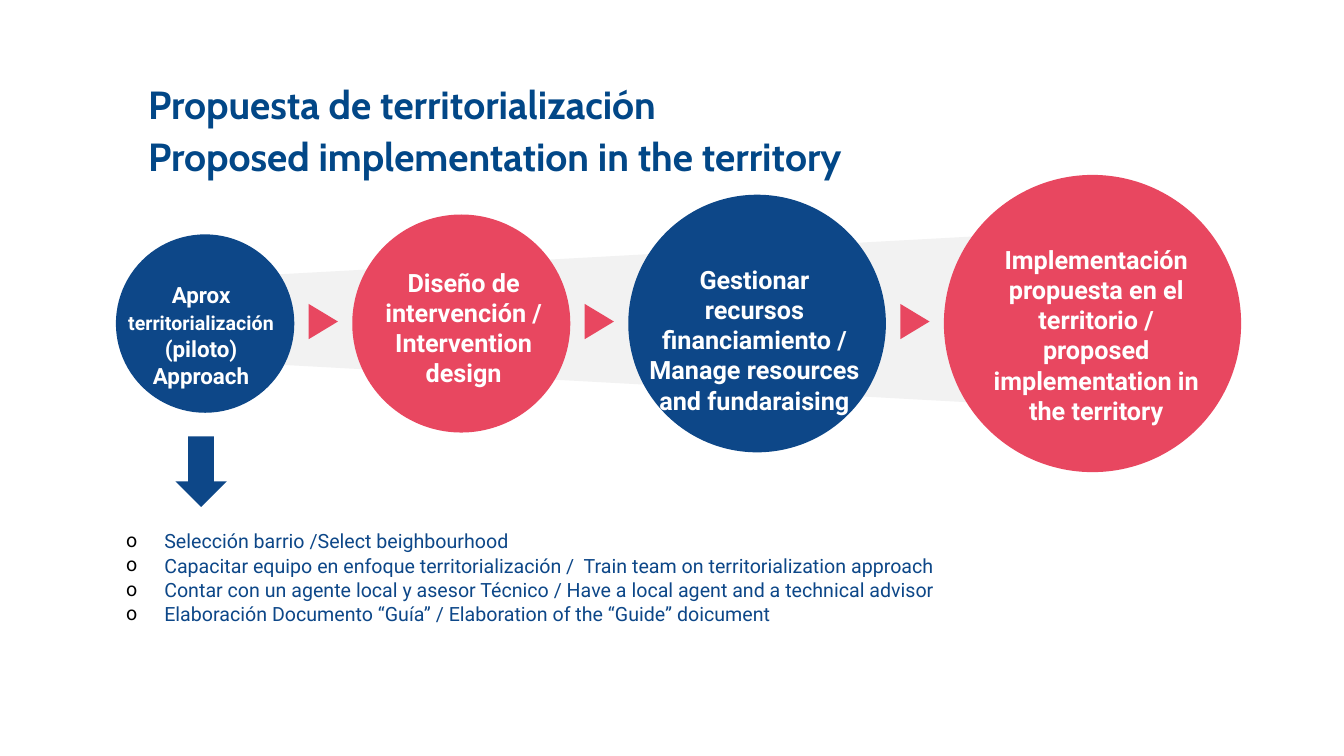
import pptx
import pptx.dml.color
import pptx.enum.shapes
import pptx.enum.text
import pptx.oxml
import pptx.oxml.ns
import pptx.util

CELL = pptx.util.Inches(0.1)
COLUMNS, ROWS = 133.33, 75
NAVY, CORAL, WHITE, TITLE_BLUE = "0D4788", "E84760", "FFFFFF", "024787"
PRESETS = pptx.enum.shapes.MSO_SHAPE
ALIGN = pptx.enum.text.PP_ALIGN

AXIS = 32.1
FIRST_LEFT, FIRST_DIAMETER, GROWTH, GAP = 11.5, 17.7, 3.93, 5.75
STAGES = [
    (NAVY, (11.2, 27.4, 17.5, 11.8),
     [[("Aprox ", 16), ("territorialización", 14), (" (piloto)", 16)], [("Approach", 16)]]),
    (CORAL, (37, 26, 18, 13.1),
     [[("Diseño de intervención / Intervention design", 18)]]),
    (NAVY, (63.3, 25.7, 23.1, 13.1),
     [[("Gestionar recursos financiamiento / Manage resources and fundaraising", 18)]]),
    (CORAL, (97.2, 23.7, 23.1, 19.2),
     [[("Implementación propuesta en el territorio / proposed implementation in the territory", 18)]]),
]
TITLES = ["Propuesta de territorialización", "Proposed implementation in the territory"]
STEPS = [
    "Selección barrio /Select beighbourhood",
    "Capacitar equipo en enfoque territorialización /  Train team on territorialization approach",
    "Contar con un agente local y asesor Técnico / Have a local agent and a technical advisor",
    "Elaboración Documento “Guía” / Elaboration of the “Guide” doicument",
]


def grid(*cells):
    return [round(cell * CELL) for cell in cells]


def color(value):
    return pptx.dml.color.RGBColor.from_string(value)


def paint(shape, fill):
    shape.fill.solid()
    shape.fill.fore_color.rgb = color(fill)
    shape.line.fill.background()
    shape.shadow.inherit = False


def add_filled(slide, preset, cells, fill):
    shape = slide.shapes.add_shape(preset, *grid(*cells))
    paint(shape, fill)
    return shape


def add_bullet(paragraph):
    properties = paragraph._p.get_or_add_pPr()
    indent = pptx.util.Inches(0.38)
    properties.set("marL", str(indent))
    properties.set("indent", str(-indent))
    namespace = pptx.oxml.ns.nsdecls("a")
    for element in (
        f'<a:buClr {namespace}><a:srgbClr val="000000"/></a:buClr>',
        f'<a:buFont {namespace} typeface="Roboto"/>',
        f'<a:buChar {namespace} char="o"/>',
    ):
        properties.append(pptx.oxml.parse_xml(element))


def write(holder, paragraphs, font, fill, bold=False, align=ALIGN.LEFT, gap=0, bulleted=False, margin=0.05):
    frame = holder.text_frame
    frame.word_wrap = True
    frame.auto_size = pptx.enum.text.MSO_AUTO_SIZE.NONE
    frame.vertical_anchor = pptx.enum.text.MSO_ANCHOR.TOP
    frame.margin_left = frame.margin_right = pptx.util.Inches(0.1)
    frame.margin_top = frame.margin_bottom = pptx.util.Inches(margin)
    for number, pieces in enumerate(paragraphs):
        paragraph = frame.add_paragraph() if number else frame.paragraphs[0]
        if bulleted:
            add_bullet(paragraph)
        paragraph.alignment = align
        paragraph.space_before = pptx.util.Pt(gap if number else 0)
        for text, size in pieces:
            run = paragraph.add_run()
            run.text = text
            run.font.name = font
            run.font.size = pptx.util.Pt(size)
            run.font.bold = bold
            run.font.color.rgb = color(fill)


def place(holder, cells):
    holder.left, holder.top, holder.width, holder.height = grid(*cells)


def add_beam(slide):
    left, right = 22.5, 97.7
    corners = [(left, 27.5), (right, 23.4), (right, 40), (left, 35.9)]
    start, *others = [grid(*corner) for corner in corners]
    builder = slide.shapes.build_freeform(*start, scale=1.0)
    builder.add_line_segments(others, close=True)
    paint(builder.convert_to_shape(), "F2F2F2")


def add_stages(slide):
    left = FIRST_LEFT
    for number, (fill, label_cells, paragraphs) in enumerate(STAGES):
        diameter = FIRST_DIAMETER + number * GROWTH
        if number:
            width, height = 3.5, 2.9
            pointer = add_filled(
                slide, PRESETS.ISOSCELES_TRIANGLE,
                (left - GAP / 2 - width / 2, AXIS - 0.2 - height / 2, width, height), CORAL)
            pointer.rotation = 90
        add_filled(slide, PRESETS.OVAL, (left, AXIS - diameter / 2, diameter, diameter), fill)
        label = slide.shapes.add_textbox(*grid(*label_cells))
        write(label, paragraphs, "Roboto", WHITE, bold=True, align=ALIGN.CENTER)
        left += diameter + GAP


def main():
    deck = pptx.Presentation()
    deck.slide_width, deck.slide_height = grid(COLUMNS, ROWS)
    slide = deck.slides.add_slide(deck.slide_layouts[1])
    title, steps = slide.placeholders

    place(title, (13.7, 7, 75, 12.2))
    write(title, [[(line, 28)] for line in TITLES], "Cabin", TITLE_BLUE, bold=True, gap=3.4, margin=0.1)

    add_beam(slide)
    add_stages(slide)
    add_filled(slide, PRESETS.DOWN_ARROW, (17.4, 43.3, 5.1, 7), NAVY)

    place(steps, (11.5, 52, 105.7, 10.4))
    write(steps, [[(step, 14)] for step in STEPS], "Roboto", NAVY, gap=0.5, bulleted=True)

    deck.save("out.pptx")


if __name__ == "__main__":
    main()
